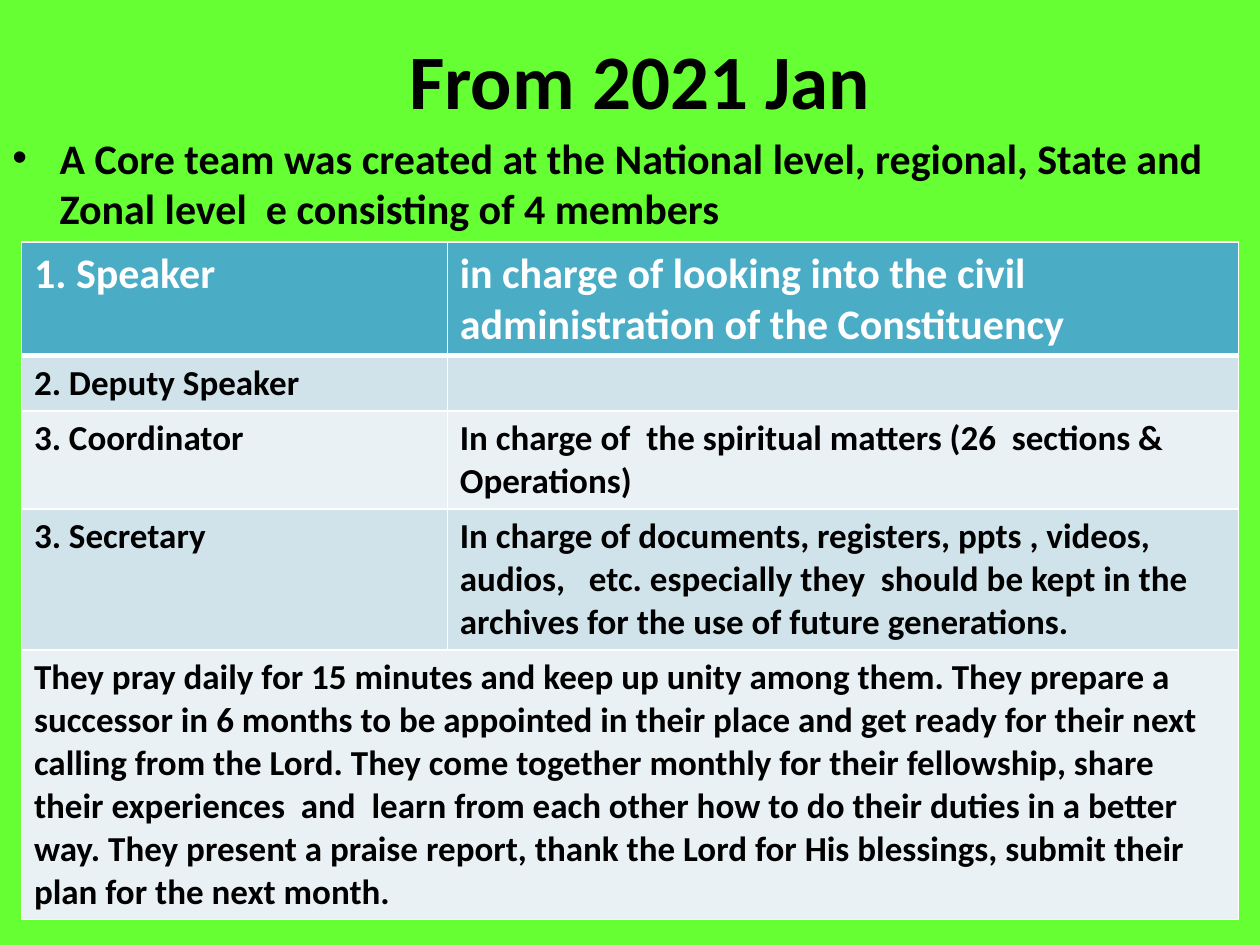
from dataclasses import dataclass

from lxml import etree
from pptx import Presentation
from pptx import util as u
from pptx.dml import color
from pptx.enum import text
from pptx.oxml import ns


@dataclass(frozen=True)
class Theme:
    font: str = "Calibri"
    background: str = "66FF33"
    ink: str = "000000"
    white: str = "FFFFFF"
    header: str = "4BACC6"
    bands: tuple = ("E9F1F5", "D0E3EA")
    title_size: int = 44
    lead_size: int = 24
    cell_size: int = 20
    rule: int = 1
    header_rule: int = 3


ROLES = [
    ("1. Speaker", "in charge of looking into the civil administration of the Constituency"),
    ("2. Deputy Speaker", ""),
    ("3. Coordinator", "In charge of  the spiritual matters (26  sections & Operations)"),
    ("3. Secretary", "In charge of documents, registers, ppts , videos, audios,   etc. "
     "especially they  should be kept in the archives for the use of future generations."),
    ("They pray daily for 15 minutes and keep up unity among them. They prepare a successor "
     "in 6 months to be appointed in their place and get ready for their next calling from "
     "the Lord. They come together monthly for their fellowship, share their experiences  and  "
     "learn from each other how to do their duties in a better way. They present a praise "
     "report, thank the Lord for His blessings, submit their plan for the next month.",),
]


class SlideBuilder:
    COLUMNS, ROWS = 100, 75

    def __init__(self, presentation, theme):
        self.theme = theme
        self.column = presentation.slide_width / self.COLUMNS
        self.row = presentation.slide_height / self.ROWS
        self.slide = presentation.slides.add_slide(presentation.slide_layouts[6])
        self.paint(self.slide.background.fill, theme.background)

    def paint(self, fill, value):
        fill.solid()
        fill.fore_color.rgb = color.RGBColor.from_string(value)

    def place(self, left, top, width, height):
        return (round(left * self.column), round(top * self.row),
                round(width * self.column), round(height * self.row))

    def set_words(self, paragraph, words, size, ink):
        paragraph.text = words
        formats = {"name": self.theme.font, "size": u.Pt(size), "bold": True}
        for name, value in formats.items():
            setattr(paragraph.font, name, value)
            for run in paragraph.runs:
                setattr(run.font, name, value)
        for run in paragraph.runs:
            run.font.color.rgb = color.RGBColor.from_string(ink)

    def text_box(self, area, words, size, **formats):
        frame = self.slide.shapes.add_textbox(*self.place(*area)).text_frame
        frame.word_wrap = True
        for name, value in formats.items():
            setattr(frame, name, value)
        paragraph = frame.paragraphs[0]
        self.set_words(paragraph, words, size, self.theme.ink)
        return paragraph

    def title(self, area, words):
        paragraph = self.text_box(area, words, self.theme.title_size,
                                  vertical_anchor=text.MSO_ANCHOR.MIDDLE)
        paragraph.alignment = text.PP_ALIGN.CENTER

    def bullet(self, area, words, indent):
        paragraph = self.text_box(area, words, self.theme.lead_size)
        properties = paragraph._p.get_or_add_pPr()
        hang = round(indent * self.column)
        properties.set("marL", str(hang))
        properties.set("indent", str(-hang))
        bullet_font = etree.Element(ns.qn("a:buFont"), typeface="Arial")
        bullet_mark = etree.Element(ns.qn("a:buChar"), char="•")
        properties.insert(0, bullet_font)
        properties.insert(1, bullet_mark)

    def borders(self, cell, top, bottom):
        properties = cell._tc.get_or_add_tcPr()
        widths = {"lnL": self.theme.rule, "lnR": self.theme.rule, "lnT": top, "lnB": bottom}
        for side, width in widths.items():
            line = etree.SubElement(properties, ns.qn(f"a:{side}"), w=str(int(u.Pt(width))))
            fill = etree.SubElement(line, ns.qn("a:solidFill"))
            etree.SubElement(fill, ns.qn("a:srgbClr"), val=self.theme.white)

    def table(self, left, top, widths, heights, rows):
        theme = self.theme
        area = self.place(left, top, sum(widths), sum(heights))
        table = self.slide.shapes.add_table(len(rows), len(widths), *area).table
        for column, width in zip(table.columns, widths):
            column.width = round(width * self.column)
        for index, (height, words) in enumerate(zip(heights, rows)):
            table.rows[index].height = round(height * self.row)
            heading = index == 0
            size, ink, shade = ((theme.lead_size, theme.white, theme.header) if heading
                                else (theme.cell_size, theme.ink, theme.bands[index % 2]))
            above = theme.header_rule if index == 1 else theme.rule
            below = theme.header_rule if heading else theme.rule
            for position in range(len(widths)):
                cell = table.cell(index, position)
                self.borders(cell, above, below)
                self.paint(cell.fill, shade)
                if position < len(words):
                    self.set_words(cell.text_frame.paragraphs[0], words[position], size, ink)
            if len(words) == 1:
                table.cell(index, 0).merge(table.cell(index, len(widths) - 1))


def main():
    presentation = Presentation()
    presentation.slide_width, presentation.slide_height = u.Inches(10), u.Inches(7.5)
    builder = SlideBuilder(presentation, Theme())
    builder.title((5.8, 0, 90, 12.5), "From 2021 Jan")
    builder.bullet((0, 10, 100, 65),
                   "A Core team was created at the National level, regional, State and "
                   "Zonal level  e consisting of 4 members", indent=3.75)
    builder.table(1.7, 19.2, (33.8, 62.8), (9, 4.4, 7.8, 11.2, 21.4), ROLES)
    presentation.save("out.pptx")


if __name__ == "__main__":
    main()
